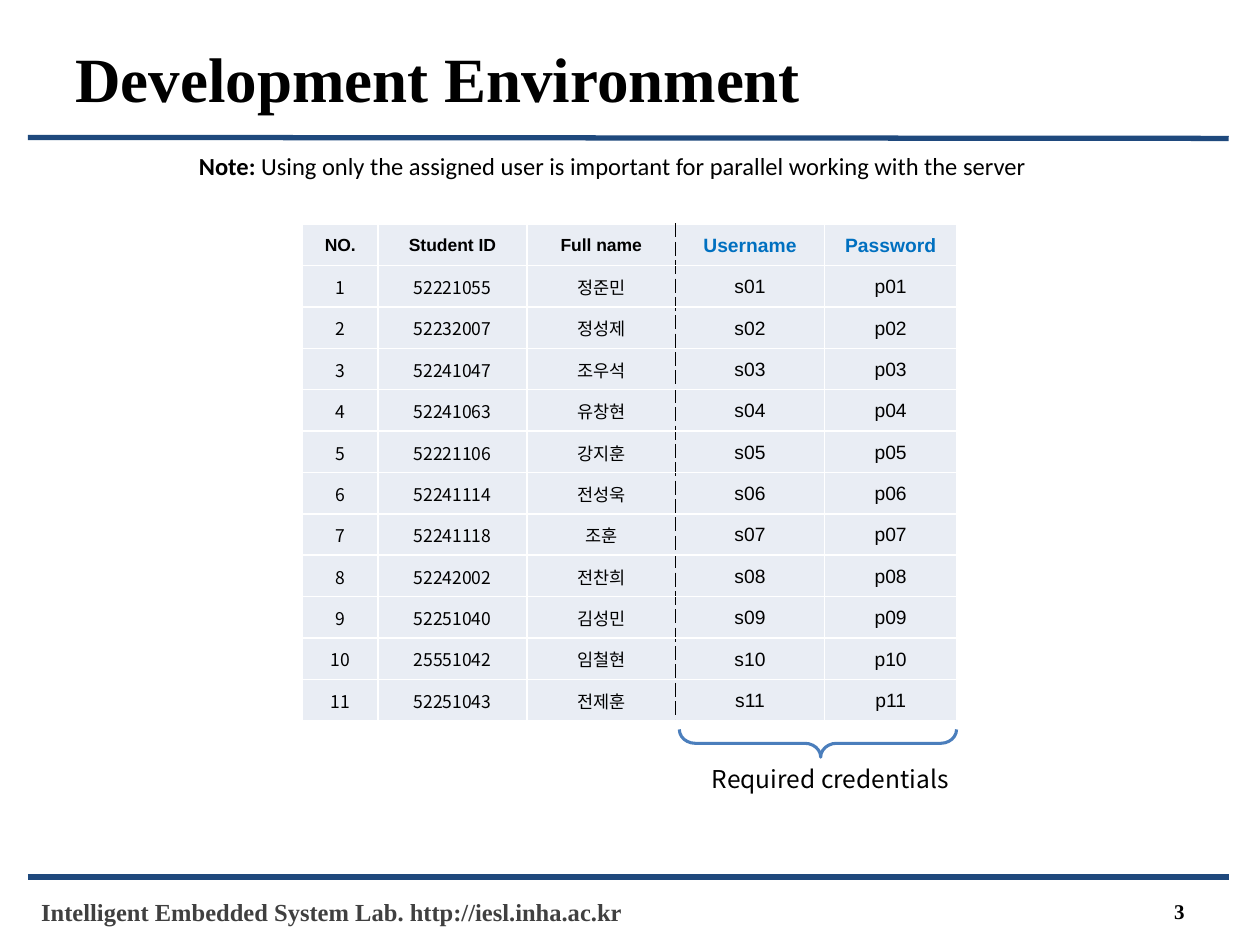
import lxml.etree
import pptx
import pptx.dml.color
import pptx.enum.shapes
import pptx.enum.text
import pptx.oxml.ns
import pptx.util

Cm = pptx.util.Cm
Pt = pptx.util.Pt
Align = pptx.enum.text.PP_ALIGN
Anchor = pptx.enum.text.MSO_ANCHOR
Shape = pptx.enum.shapes.MSO_SHAPE
qn = pptx.oxml.ns.qn

COLORS = {
    "black": "000000",
    "white": "FFFFFF",
    "navy": "1F497D",
    "gray": "404040",
    "accent": "0070C0",
    "cell": "E9EDF4",
    "brace": "4B7EBC",
}
SERIF, SANS, BODY, KOREAN = "Times New Roman", "Arial", "Calibri", "Noto Sans CJK KR"

HEADERS = ["NO.", "Student ID", "Full name", "Username", "Password"]
STUDENTS = [
    ("52221055", "정준민"),
    ("52232007", "정성제"),
    ("52241047", "조우석"),
    ("52241063", "유창현"),
    ("52221106", "강지훈"),
    ("52241114", "전성욱"),
    ("52241118", "조훈"),
    ("52242002", "전찬희"),
    ("52251040", "김성민"),
    ("25551042", "임철현"),
    ("52251043", "전제훈"),
]
COLUMN_WIDTHS = [1.52, 3, 3, 3, 2.67]
COLUMN_FONTS = [KOREAN, KOREAN, SANS, SANS, SANS]
COLUMN_SIZES = [10, 10, 10, 11, 11]
FIRST_CREDENTIAL = 3


class SlideBuilder:
    """Holds the palette and the current slide and draws each kind of element."""

    def __init__(self, page, colors):
        self.page = page
        self.colors = colors

    def color(self, name):
        return pptx.dml.color.RGBColor.from_string(self.colors[name])

    def style(self, span, size, font, color="black", bold=False):
        span.font.size = Pt(size)
        span.font.name = font
        span.font.bold = bold
        span.font.color.rgb = self.color(color)

    def text(self, place, spans, size, font, color="black", align=Align.LEFT,
             anchor=Anchor.TOP, wrap=True):
        box = self.page.shapes.add_textbox(*(Cm(length) for length in place))
        frame = box.text_frame
        frame.word_wrap = wrap
        frame.vertical_anchor = anchor
        para = frame.paragraphs[0]
        para.alignment = align
        for words, bold in spans:
            span = para.add_run()
            span.text = words
            self.style(span, size, font, color, bold)

    def rule(self, left, top, right, bottom):
        line = self.page.shapes.add_connector(
            pptx.enum.shapes.MSO_CONNECTOR.STRAIGHT,
            Cm(left), Cm(top), Cm(right), Cm(bottom))
        line.line.color.rgb = self.color("navy")
        line.line.width = Pt(3)
        lxml.etree.SubElement(line._element.spPr, qn("a:effectLst"))

    def brace(self, left, top, width, height):
        brace = self.page.shapes.add_shape(
            Shape.RIGHT_BRACE, Cm(left), Cm(top), Cm(width), Cm(height))
        brace.adjustments[0] = 0.57
        brace.adjustments[1] = 0.51
        brace.rotation = 270
        brace._element.spPr.find(qn("a:xfrm")).set("flipH", "1")
        brace.shadow.inherit = False
        brace.fill.background()
        brace.line.color.rgb = self.color("brace")
        brace.line.width = Pt(1.75)

    def borders(self, cell, dashed_side):
        properties = cell._tc.get_or_add_tcPr()
        for index, side in enumerate(["lnL", "lnR", "lnT", "lnB"]):
            dashed = side == dashed_side
            edge = lxml.etree.Element(qn("a:" + side), w=str(Pt(0.5 if dashed else 1)))
            fill = lxml.etree.SubElement(edge, qn("a:solidFill"))
            shade = self.colors["black" if dashed else "white"]
            lxml.etree.SubElement(fill, qn("a:srgbClr"), val=shade)
            lxml.etree.SubElement(edge, qn("a:prstDash"), val="lgDash" if dashed else "solid")
            properties.insert(index, edge)

    def cell(self, cell, words, size, font, color, bold, dashed_side):
        cell.text_frame.text = words
        cell.vertical_anchor = Anchor.MIDDLE
        cell.margin_left = cell.margin_right = cell.margin_top = Cm(0.03)
        cell.margin_bottom = 0
        para = cell.text_frame.paragraphs[0]
        para.alignment = Align.CENTER
        self.style(para.runs[0], size, font, color, bold)
        cell.fill.solid()
        cell.fill.fore_color.rgb = self.color("cell")
        self.borders(cell, dashed_side)

    def table(self, left, top, height, rows):
        table = self.page.shapes.add_table(
            len(rows), len(COLUMN_WIDTHS), Cm(left), Cm(top),
            Cm(sum(COLUMN_WIDTHS)), Cm(height)).table
        table.first_row = table.horz_banding = False
        dashed_sides = {FIRST_CREDENTIAL - 1: "lnR", FIRST_CREDENTIAL: "lnL"}
        for column, width in zip(table.columns, COLUMN_WIDTHS):
            column.width = Cm(width)
        for number, values in enumerate(rows):
            table.rows[number].height = Cm(height) // len(rows)
            header = number == 0
            for index, words in enumerate(values):
                font = SANS if header else COLUMN_FONTS[index]
                color = "accent" if header and index >= FIRST_CREDENTIAL else "black"
                self.cell(table.cell(number, index), words, COLUMN_SIZES[index],
                          font, color, header, dashed_sides.get(index))


def main():
    deck = pptx.Presentation()
    deck.slide_width, deck.slide_height = Cm(25.4), Cm(19.05)
    slide = SlideBuilder(deck.slides.add_slide(deck.slide_layouts[6]), COLORS)

    slide.rule(0.56, 17.68, 24.77, 17.68)
    slide.text((0.58, 17.96, 12.7, 0.86),
               [("Intelligent Embedded System Lab. http://iesl.inha.ac.kr", True)],
               14, SERIF, "gray")
    slide.rule(0.56, 2.77, 24.77, 2.79)
    slide.text((1.27, 0.56, 22.86, 2), [("Development Environment", True)],
               36, SERIF, anchor=Anchor.MIDDLE)
    slide.text((18.21, 17.96, 5.92, 0.81), [("3", True)], 12, SERIF,
               align=Align.RIGHT, anchor=Anchor.MIDDLE)

    rows = [HEADERS] + [
        (str(number), student, name, f"s{number:02}", f"p{number:02}")
        for number, (student, name) in enumerate(STUDENTS, 1)
    ]
    slide.table(6.1, 4.52, 10.01, rows)

    slide.text((3.76, 2.92, 17.32, 0.86),
               [("Note: ", True),
                ("Using only the assigned user is important for parallel "
                 "working with the server", False)],
               14, BODY, wrap=False)
    slide.brace(16.21, 12.19, 0.56, 5.59)
    slide.text((14.1, 15.27, 5.31, 0.86), [("Required credentials", False)],
               14, KOREAN, wrap=False)
    deck.save("out.pptx")


if __name__ == "__main__":
    main()
